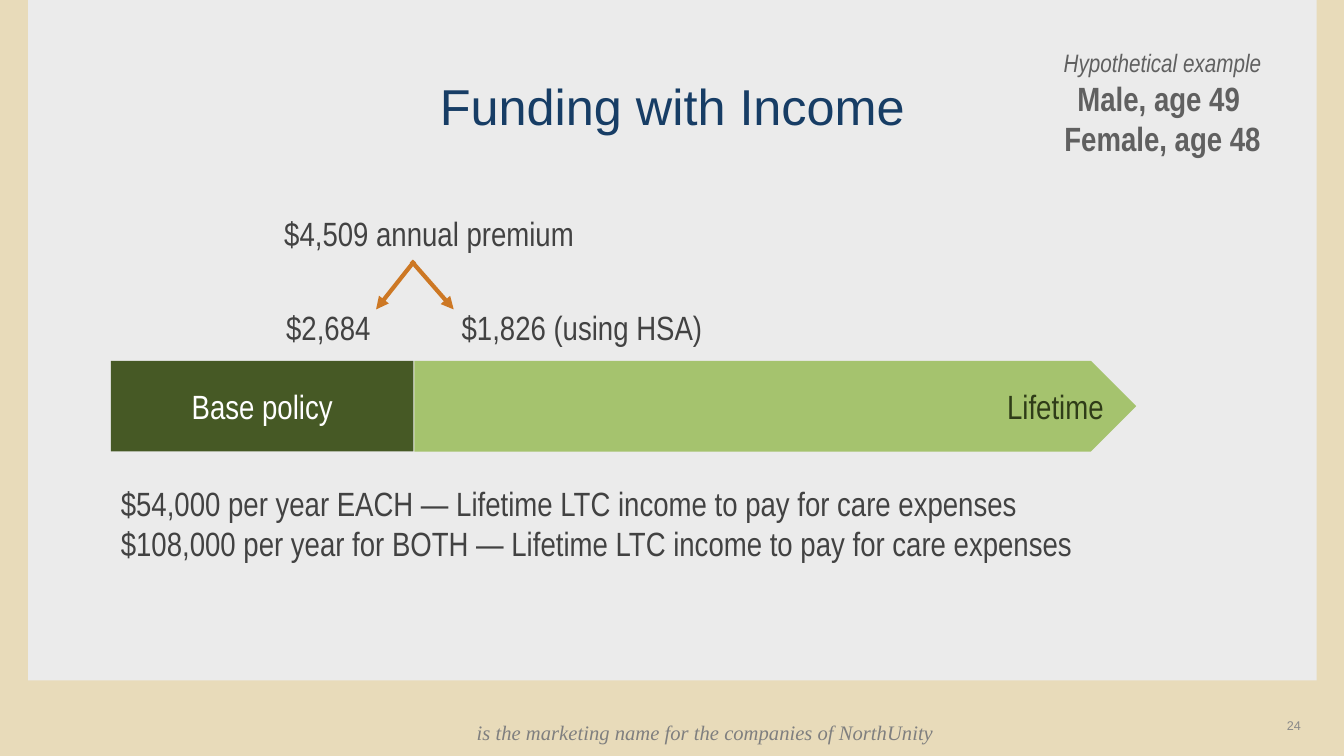
from lxml.etree import SubElement
from pptx import Presentation
from pptx.dml.color import RGBColor
from pptx.enum.shapes import MSO_CONNECTOR, MSO_SHAPE
from pptx.enum.text import MSO_ANCHOR, PP_ALIGN
from pptx.oxml.ns import qn
from pptx.util import Inches, Pt

COLORS = {
    "sand": "E8DBBA", "panel": "EBEBEB", "navy": "173D65", "text": "424242",
    "example": "606060", "footer": "7F7F7F", "number": "898989",
    "light_green": "A5C36E", "dark_green": "465925", "lifetime": "2F3C18",
    "white": "FFFFFF", "orange": "CD7824",
}


def write(shape, lines, color, size=24, font="Arial Narrow",
          align=PP_ALIGN.LEFT, anchor=MSO_ANCHOR.TOP):
    """Fill a shape with one uniformly formatted paragraph per line."""
    frame = shape.text_frame
    frame.word_wrap = True
    frame.vertical_anchor = anchor
    frame.text = "\n".join(lines)
    for paragraph in frame.paragraphs:
        paragraph.alignment = align
        for run in paragraph.runs:
            run.font.name = font
            run.font.size = Pt(size)
            run.font.color.rgb = RGBColor.from_string(COLORS[color])


def add_block(preset, left, top, width, height, color):
    block = slide.shapes.add_shape(
        preset, Inches(left), Inches(top), Inches(width), Inches(height))
    block.shadow.inherit = False
    block.fill.solid()
    block.fill.fore_color.rgb = RGBColor.from_string(COLORS[color])
    block.line.fill.background()
    return block


presentation = Presentation()
presentation.slide_width = Inches(13.33)
presentation.slide_height = Inches(7.5)
slide = presentation.slides.add_slide(presentation.slide_layouts[6])
slide.background.fill.solid()
slide.background.fill.fore_color.rgb = RGBColor.from_string(COLORS["sand"])

add_block(MSO_SHAPE.RECTANGLE, 0.28, 0, 12.78, 6.75, "panel")

# Policy bar
lifetime = add_block(MSO_SHAPE.PENTAGON, 4.11, 3.58, 7.16, 0.9, "light_green")
write(lifetime, ["Lifetime"], "lifetime", align=PP_ALIGN.RIGHT, anchor=MSO_ANCHOR.MIDDLE)
base_policy = add_block(MSO_SHAPE.RECTANGLE, 1.1, 3.58, 3, 0.9, "dark_green")
write(base_policy, ["Base policy"], "white", align=PP_ALIGN.CENTER, anchor=MSO_ANCHOR.MIDDLE)

# Text boxes: position, lines, colour and formatting that differs from the body text
text_boxes = [
    ((4.63, 7.09, 6.6, 0.35), ["is the marketing name for the companies of NorthUnity"],
     "footer", {"size": 14.7, "font": "Times New Roman"}),
    ((11.44, 6.92, 1.56, 0.4), ["24"], "number",
     {"size": 9, "font": "Arial", "align": PP_ALIGN.RIGHT, "anchor": MSO_ANCHOR.BOTTOM}),
    ((0.67, 0.52, 12, 1.05), ["Funding with Income"], "navy",
     {"size": 36, "font": "Arial", "align": PP_ALIGN.CENTER, "anchor": MSO_ANCHOR.MIDDLE}),
    ((1.1, 4.74, 11.67, 1.31),
     ["$54,000 per year EACH — Lifetime LTC income to pay for care expenses",
      "$108,000 per year for BOTH — Lifetime LTC income to pay for care expenses"],
     "text", {}),
    ((2.72, 2.06, 3.55, 0.5), ["$4,509 annual premium"], "text", {}),
    ((2.74, 3, 1.2, 0.5), ["$2,684"], "text", {}),
    ((4.48, 3, 3.42, 0.5), ["$1,826 (using HSA)"], "text", {}),
    ((10.08, 0.42, 2.9, 1.21), ["Hypothetical example", "Male, age 49 ", "Female, age 48"],
     "example", {"align": PP_ALIGN.CENTER}),
]
boxes = []
for position, lines, color, formatting in text_boxes:
    box = slide.shapes.add_textbox(*map(Inches, position))
    write(box, lines, color, **formatting)
    boxes.append(box)

footer, example = boxes[0], boxes[-1]
footer.text_frame.paragraphs[0].runs[0].font.italic = True
heading, *insured = example.text_frame.paragraphs
heading.runs[0].font.italic = True
heading.runs[0].font.size = Pt(18)
for paragraph in insured:
    paragraph.runs[0].font.bold = True

# Arrows splitting the premium
for start, end in [(4.11, 3.73), (4.08, 4.5)]:
    arrow = slide.shapes.add_connector(
        MSO_CONNECTOR.STRAIGHT, Inches(start), Inches(2.59), Inches(end), Inches(3.07))
    arrow.line.color.rgb = RGBColor.from_string(COLORS["orange"])
    arrow.line.width = Pt(3)
    SubElement(arrow.line._get_or_add_ln(), qn("a:tailEnd"), type="triangle")
    SubElement(arrow._element.spPr, qn("a:effectLst"))

presentation.save("out.pptx")
